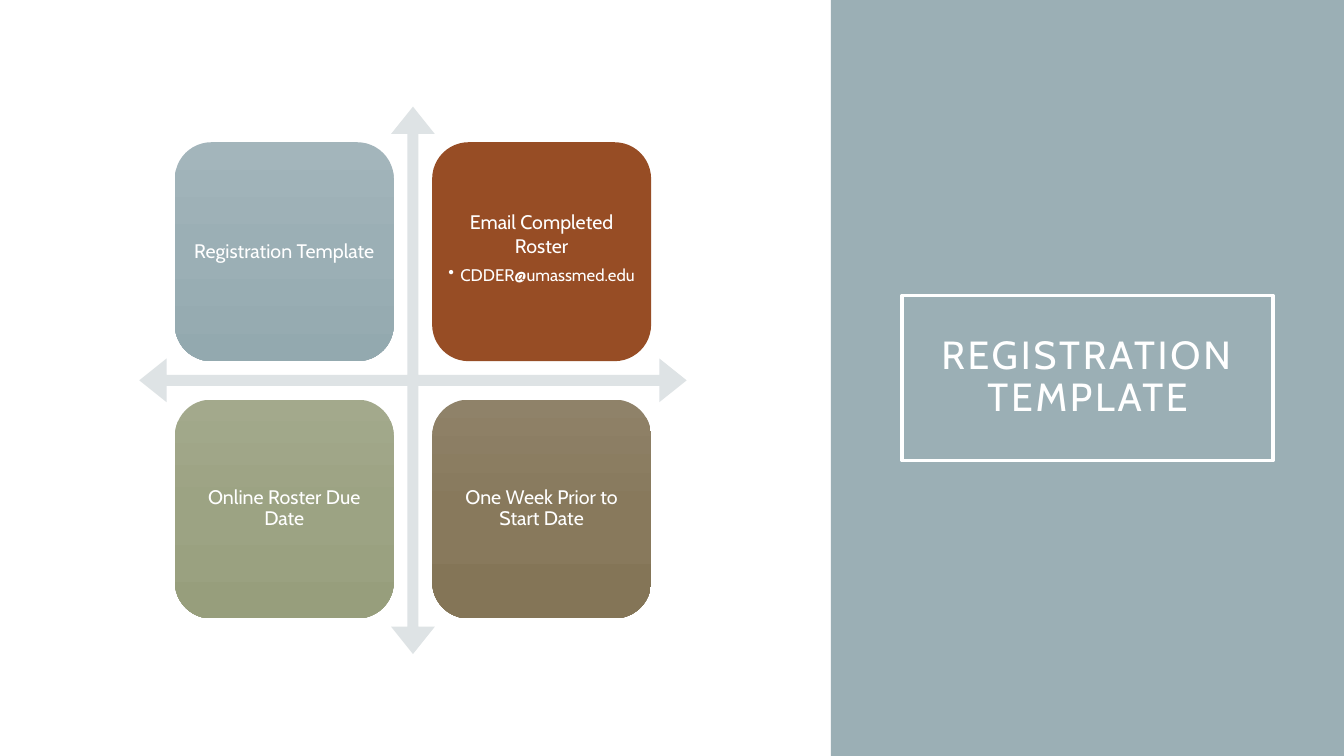
import copy
from dataclasses import dataclass
from typing import Optional

import pptx
import pptx.dml.color
import pptx.enum.shapes
import pptx.enum.text
import pptx.oxml
import pptx.oxml.ns
import pptx.util
from pptx.dml.color import RGBColor
from pptx.enum.shapes import MSO_SHAPE
from pptx.util import Pt

FONT = "Cabin"
WHITE = RGBColor(0xFF, 0xFF, 0xFF)
PANEL_BLUE = RGBColor(0x9B, 0xAF, 0xB5)
ARROW_GRAY = RGBColor(0xDE, 0xE3, 0xE5)
BLUE_SHADES = (RGBColor(0xA3, 0xB5, 0xBB), PANEL_BLUE, RGBColor(0x93, 0xA9, 0xAF))
RUST = (RGBColor(0x97, 0x4D, 0x25),)
GREEN_SHADES = (
    RGBColor(0xA3, 0xA9, 0x8C),
    RGBColor(0x9C, 0xA3, 0x83),
    RGBColor(0x97, 0x9E, 0x7C),
)
BROWN_SHADES = (
    RGBColor(0x8F, 0x82, 0x69),
    RGBColor(0x88, 0x79, 0x5C),
    RGBColor(0x84, 0x75, 0x57),
)

MATRIX_LEFT, MATRIX_TOP, MATRIX_SIZE = 99.5, 76.2, 391
TILE_LEFT, TILE_TOP = 124.9, 101.6
TILE_SIZE, TILE_STEP = 156.4, 183.8


@dataclass
class Tile:
    column: int
    row: int
    shades: tuple
    heading: str
    bullet: Optional[str] = None


TILES = [
    Tile(0, 0, BLUE_SHADES, "Registration Template"),
    Tile(1, 0, RUST, "Email Completed Roster", "CDDER@umassmed.edu"),
    Tile(0, 1, GREEN_SHADES, "Online Roster Due Date"),
    Tile(1, 1, BROWN_SHADES, "One Week Prior to Start Date"),
]


def add_plain_shape(page, kind, left: float, top: float, width: float, height: float):
    shape = page.shapes.add_shape(kind, Pt(left), Pt(top), Pt(width), Pt(height))
    shape.shadow.inherit = False
    shape.line.fill.background()
    return shape


def fill_shape(shape, shades: tuple) -> None:
    if len(shades) == 1:
        shape.fill.solid()
        shape.fill.fore_color.rgb = shades[0]
        return
    shape.fill.gradient()
    shape.fill.gradient_angle = 270
    first = shape._element.spPr.find(".//" + pptx.oxml.ns.qn("a:gs"))
    first.addnext(copy.deepcopy(first))
    for index, (stop, shade) in enumerate(zip(shape.fill.gradient_stops, shades)):
        stop.position = index / 2
        stop.color.rgb = shade


def prepare_frame(shape, inset: float):
    frame = shape.text_frame
    frame.word_wrap = True
    frame.vertical_anchor = pptx.enum.text.MSO_ANCHOR.MIDDLE
    frame.margin_left = frame.margin_right = Pt(inset)
    frame.margin_top = frame.margin_bottom = Pt(inset)
    return frame


def write_run(para, text: str, size: float):
    para.alignment = pptx.enum.text.PP_ALIGN.CENTER
    span = para.add_run()
    span.text = text
    span.font.name = FONT
    span.font.size = Pt(size)
    span.font.color.rgb = WHITE
    return span


def add_bullet(para) -> None:
    properties = para._p.get_or_add_pPr()
    properties.set("marL", str(Pt(8.6)))
    properties.set("indent", str(-Pt(8.6)))
    bullet = pptx.oxml.parse_xml(
        f'<a:buChar {pptx.oxml.ns.nsdecls("a")} char="•"/>'
    )
    properties.append(bullet)


def draw_tile(page, tile: Tile) -> None:
    box = add_plain_shape(
        page,
        MSO_SHAPE.ROUNDED_RECTANGLE,
        TILE_LEFT + tile.column * TILE_STEP,
        TILE_TOP + tile.row * TILE_STEP,
        TILE_SIZE,
        TILE_SIZE,
    )
    fill_shape(box, tile.shades)
    frame = prepare_frame(box, 3.6 if tile.bullet else 4.2)
    heading = frame.paragraphs[0]
    write_run(heading, tile.heading, 14)
    if tile.bullet:
        frame.vertical_anchor = pptx.enum.text.MSO_ANCHOR.TOP
        frame.margin_top = Pt(41)
        heading.space_after = Pt(5)
        detail = frame.add_paragraph()
        add_bullet(detail)
        write_run(detail, tile.bullet, 12)
    else:
        heading.line_spacing = 0.9


def draw_title(page) -> None:
    panel = add_plain_shape(page, MSO_SHAPE.RECTANGLE, 593.4, 0, 366.6, 540)
    fill_shape(panel, (PANEL_BLUE,))
    box = add_plain_shape(page, MSO_SHAPE.RECTANGLE, 644.4, 211, 265, 118)
    box.fill.background()
    box.line.color.rgb = WHITE
    box.line.width = Pt(2.5)
    para = prepare_frame(box, 14.4).paragraphs[0]
    para.line_spacing = 0.9
    span = write_run(para, "REGISTRATION TEMPLATE", 28)
    span.font._element.set("spc", "200")


def draw_matrix(page) -> None:
    arrows = add_plain_shape(
        page, MSO_SHAPE.QUAD_ARROW, MATRIX_LEFT, MATRIX_TOP, MATRIX_SIZE, MATRIX_SIZE
    )
    fill_shape(arrows, (ARROW_GRAY,))
    for index, ratio in enumerate((0.02, 0.04, 0.05)):
        arrows.adjustments[index] = ratio
    for tile in TILES:
        draw_tile(page, tile)


def main() -> None:
    deck = pptx.Presentation()
    deck.slide_width, deck.slide_height = Pt(960), Pt(540)
    page = deck.slides.add_slide(deck.slide_layouts[6])
    draw_title(page)
    draw_matrix(page)
    deck.save("out.pptx")


if __name__ == "__main__":
    main()
